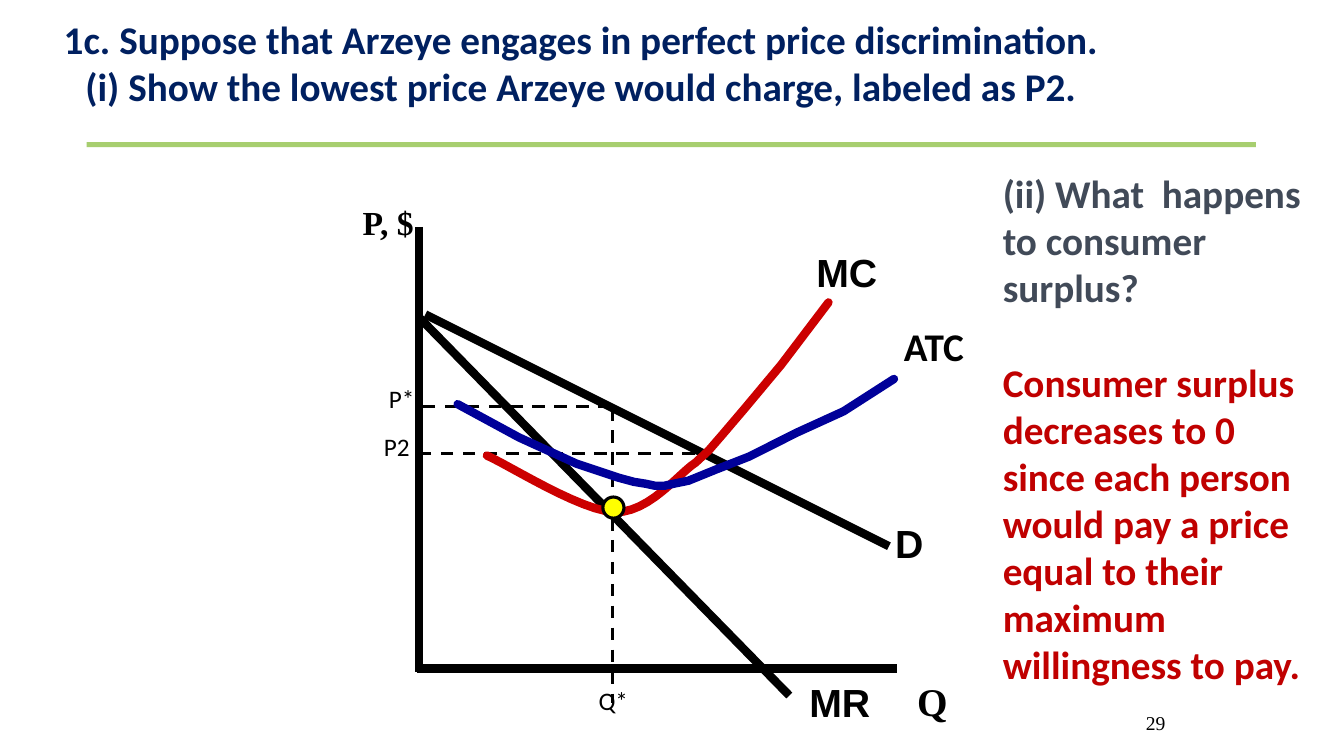
from lxml import etree
from pptx import Presentation
from pptx.dml.color import RGBColor
from pptx.enum.dml import MSO_LINE
from pptx.enum.shapes import MSO_CONNECTOR, MSO_SHAPE
from pptx.enum.text import MSO_ANCHOR, MSO_AUTO_SIZE, PP_ALIGN
from pptx.oxml.ns import qn
from pptx.util import Pt

DASH = MSO_LINE.DASH
STRAIGHT = MSO_CONNECTOR.STRAIGHT
RECT, OVAL = MSO_SHAPE.RECTANGLE, MSO_SHAPE.OVAL
TOP = MSO_ANCHOR.TOP
NO_FIT = MSO_AUTO_SIZE.NONE
LEFT, CENTER, RIGHT = PP_ALIGN.LEFT, PP_ALIGN.CENTER, PP_ALIGN.RIGHT

BLACK, NAVY, GREEN, GREY, CRIMSON = "000000", "002060", "A7CE6F", "414A58", "C00000"
RED, BLUE, YELLOW = "CC0000", "000099", "FFFF00"
SANS, BODY, SERIF = "Arial", "Calibri", "Times New Roman"
THICK, THIN = 6, 2.25

# Tangent points and handles of the rounded part of the marginal cost curve
MC_DIP = [
    [(347.8, 325.4), (362.9, 331.9), (414.7, 365), (439.2, 365.8)],
    [(439.2, 365.8), (463.7, 366.5), (485.3, 337.7), (496.8, 330.5)],
]
MC_RISE = [(506.2, 321.8), (516.2, 310.3), (532.1, 291.6), (558, 260.6), (591.8, 216)]
ATC = [
    (326.9, 288.7), (370.8, 312.5), (411.8, 331.2), (442.1, 341.3), (452.9, 344.2),
    (461.5, 345.6), (468, 347), (474.5, 347), (481, 345.6), (491.8, 343.4),
    (511.2, 335.5), (535, 326.2), (569.5, 308.9), (602.6, 293.8), (638.6, 270.7),
]

LINES = [  # start x, y, end x, y
    (299.5, 226.8, 563.8, 496.8),  # marginal revenue
    (303.8, 224.6, 635, 390.2),    # demand
    (299.5, 162, 299.5, 480.2),    # price axis
    (298.1, 477.4, 640.8, 477.4),  # quantity axis
]
GUIDES = [
    (436.3, 290.2, 298.1, 290.2),
    (437.8, 291.6, 437.8, 501.8),
    (496.1, 324, 300.2, 324),
]
LABELS = [  # text, left, top, width, height, font, size, bold
    ("D", 632.2, 367.2, 42.5, 40.3, SANS, 28, True),
    ("MC", 576, 174.2, 59, 40.3, SANS, 28, True),
    ("ATC", 638.6, 226.8, 89.3, 40.3, BODY, 28, True),
    ("MR", 571, 481, 58.3, 40.3, SANS, 28, True),
    ("Q", 648, 480.2, 36, 40.3, SERIF, 28, True),
    ("P, $", 252, 140.4, 67.7, 40.3, SERIF, 24, True),
    ("Q*", 420.5, 486, 59.8, 36, BODY, 18, False),
    ("P*", 270.7, 270, 33.1, 28.8, BODY, 18, False),
    ("P2", 267.1, 304.6, 33.1, 28.8, BODY, 18, False),
]


def color(text):
    return RGBColor.from_string(text)


def place(shape, left, top, width, height):
    shape.left, shape.top = Pt(left), Pt(top)
    shape.width, shape.height = Pt(width), Pt(height)


def style(para, font, size, hue, bold=False, align=LEFT):
    para.alignment = align
    for run in para.runs:
        run.font.name, run.font.size, run.font.bold = font, Pt(size), bold
        run.font.color.rgb = color(hue)


def add_text(slide, text, left, top, width, height, font, size, bold, align=LEFT, wrap=True):
    box = slide.shapes.add_textbox(Pt(left), Pt(top), Pt(width), Pt(height))
    frame = box.text_frame
    frame.word_wrap = wrap
    frame.text = text
    for para in frame.paragraphs:
        style(para, font, size, BLACK, bold, align)
    return frame


def add_title(slide):
    title = slide.shapes.title
    place(title, 36, 7.2, 757.4, 123.1)
    frame = title.text_frame
    frame.text = ("1c. Suppose that Arzeye engages in perfect price discrimination. \n"
                  "(i) Show the lowest price Arzeye would charge, labeled as P2.")
    frame.vertical_anchor, frame.auto_size = TOP, NO_FIT
    for para in frame.paragraphs:
        style(para, BODY, 28, NAVY, True, CENTER)


def add_line(slide, ends, width, dash=None):
    line = slide.shapes.add_connector(STRAIGHT, *[Pt(v) for v in ends])
    line.line.color.rgb = color(BLACK)
    line.line.width = Pt(width)
    if dash:
        line.line.dash_style = dash
    etree.SubElement(line._element.spPr, qn("a:effectLst"))


def add_shape(slide, kind, left, top, width, height, fill, edge=None):
    shape = slide.shapes.add_shape(kind, Pt(left), Pt(top), Pt(width), Pt(height))
    shape.shadow.inherit = False
    shape.fill.solid()
    shape.fill.fore_color.rgb = color(fill)
    if edge:
        shape.line.color.rgb = color(edge)
        shape.line.width = Pt(THIN)
    else:
        shape.line.fill.background()


def bezier(a, b, c, d, steps=12):
    """Return points along a cubic curve, without its first point."""
    points = []
    for step in range(1, steps + 1):
        t = step / steps
        u = 1 - t
        points.append(tuple(u**3 * p + 3 * u * u * t * q + 3 * u * t * t * r + t**3 * s
                            for p, q, r, s in zip(a, b, c, d)))
    return points


def add_curve(slide, points, hue):
    """Draw an open line with round ends through the points."""
    spots = [(Pt(x), Pt(y)) for x, y in points]
    path = slide.shapes.build_freeform(*spots[0])
    path.add_line_segments(spots[1:], close=False)
    curve = path.convert_to_shape()
    curve.shadow.inherit = False
    curve.fill.background()
    curve.line.color.rgb = color(hue)
    curve.line.width = Pt(THICK)
    pen = curve.line._get_or_add_ln()
    pen.set("cap", "rnd")
    etree.SubElement(pen, qn("a:round"))


def add_graph(slide):
    for ends in LINES:
        add_line(slide, ends, THICK)
    for ends in GUIDES:
        add_line(slide, ends, THIN, DASH)
    dip = [point for arc in MC_DIP for point in bezier(*arc)]
    add_curve(slide, MC_DIP[0][:1] + dip + MC_RISE, RED)
    add_shape(slide, OVAL, 430.6, 355, 15.1, 15.1, YELLOW, BLACK)
    add_curve(slide, ATC, BLUE)
    for label in LABELS:
        add_text(slide, *label, wrap=label[0] not in ("P*", "P2"))


def add_answer(slide):
    frame = add_text(
        slide,
        "(ii) What  happens to consumer surplus?\n"
        "Consumer surplus decreases to 0 since each person would pay a price "
        "equal to their maximum willingness to pay.",
        709.2, 117.4, 227.5, 380.2, BODY, 28, True)
    ask, reply = frame.paragraphs
    style(ask, BODY, 28, GREY, True)
    style(reply, BODY, 28, CRIMSON, True)
    reply.space_before = Pt(34)


def main():
    deck = Presentation()
    deck.slide_width, deck.slide_height = Pt(960), Pt(540)
    slide = deck.slides.add_slide(deck.slide_layouts[5])
    add_shape(slide, RECT, 61.9, 101.5, 835.2, 3.6, GREEN)
    add_title(slide)
    add_graph(slide)
    add_answer(slide)
    add_text(slide, "29", 689.8, 504, 149.8, 36, SERIF, 14, False, RIGHT)
    deck.save("out.pptx")


if __name__ == "__main__":
    main()
